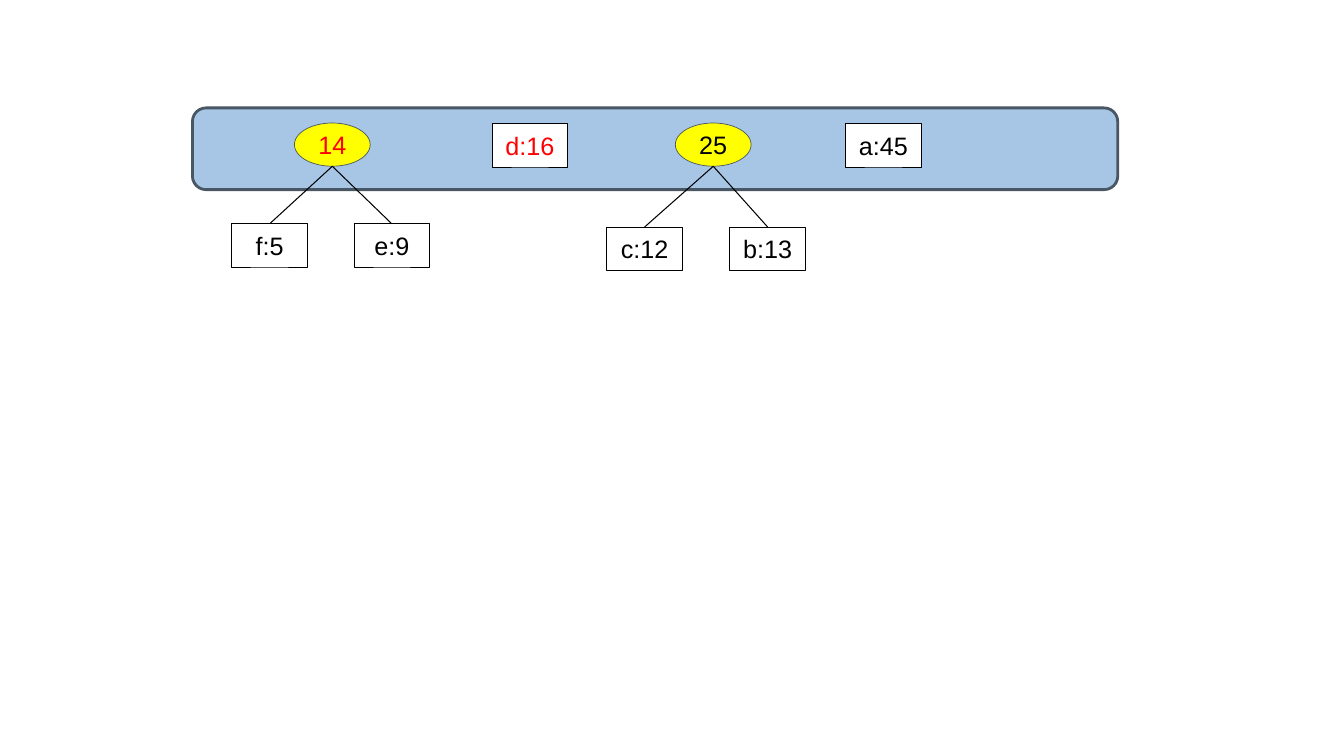
from lxml.etree import SubElement
from pptx import Presentation
from pptx.dml.color import RGBColor
from pptx.enum.shapes import MSO_CONNECTOR, MSO_SHAPE
from pptx.enum.text import MSO_ANCHOR, PP_ALIGN
from pptx.oxml.ns import qn
from pptx.util import Cm, Pt

BLACK, RED, WHITE, YELLOW = "000000", "FF0000", "FFFFFF", "FFFF00"
SLATE, BLUE = "495764", "A7C6E5"


def rgb(value):
    return RGBColor.from_string(value)


def write(sp, text, size=18, font="Arial", color=BLACK):
    tf = sp.text_frame
    tf.margin_left = tf.margin_right = tf.margin_top = tf.margin_bottom = 0
    tf.vertical_anchor = MSO_ANCHOR.MIDDLE
    p = tf.paragraphs[0]
    p.alignment = PP_ALIGN.CENTER
    r = p.add_run()
    r.text = text
    r.font.size = Pt(size)
    r.font.name = font
    r.font.color.rgb = rgb(color)


class HuffmanSlide:
    """Draws a Huffman queue and its subtrees on one slide."""

    node_w, node_h = 1.91, 1.09

    def __init__(self, slide):
        self.s = slide

    def shape(self, kind, x, y, w, h, fill, line, weight):
        sp = self.s.shapes.add_shape(kind, Cm(x), Cm(y), Cm(w), Cm(h))
        sp.shadow.inherit = False
        sp.fill.solid()
        sp.fill.fore_color.rgb = rgb(fill)
        sp.line.color.rgb = rgb(line)
        sp.line.width = Pt(weight)
        return sp

    def queue(self, x, y, w, h):
        self.shape(MSO_SHAPE.ROUNDED_RECTANGLE, x, y, w, h, BLUE, SLATE, 2)

    def leaf(self, text, x, y, color=BLACK):
        sp = self.shape(MSO_SHAPE.RECTANGLE, x, y, self.node_w, self.node_h, WHITE, BLACK, 0.5)
        write(sp, text, color=color)
        return sp

    def root(self, text, x, y, color=BLACK):
        sp = self.shape(MSO_SHAPE.OVAL, x, y, self.node_w, self.node_h, YELLOW, SLATE, 0.5)
        write(sp, text, color=color)
        return sp

    def branch(self, child, parent):
        end_x = parent.left + parent.width // 2
        end_y = parent.top + parent.height
        line = self.s.shapes.add_connector(
            MSO_CONNECTOR.STRAIGHT, child.left, child.top, end_x, end_y)
        line.begin_connect(child, 0)
        line.line.color.rgb = rgb(BLACK)
        line.line.width = Pt(0.75)
        SubElement(line._element.spPr, qn("a:effectLst"))

    def tree(self, weight, x, y, leaves, leaf_y, color=BLACK):
        children = [self.leaf(text, leaf_x, leaf_y) for text, leaf_x in leaves]
        parent = self.root(weight, x, y, color)
        for child in children:
            self.branch(child, parent)


def main():
    prs = Presentation()
    prs.slide_width, prs.slide_height = Cm(33.87), Cm(19.05)
    slide = HuffmanSlide(prs.slides.add_slide(prs.slide_layouts[6]))
    slide.queue(4.85, 2.72, 23.32, 2.06)
    slide.leaf("d:16", 12.4, 3.12, RED)
    slide.leaf("a:45", 21.31, 3.12)
    slide.tree("14", 7.42, 3.1, [("f:5", 5.84), ("e:9", 8.92)], 5.64, RED)
    slide.tree("25", 17.02, 3.1, [("c:12", 15.29), ("b:13", 18.39)], 5.72)
    prs.save("out.pptx")


if __name__ == "__main__":
    main()
